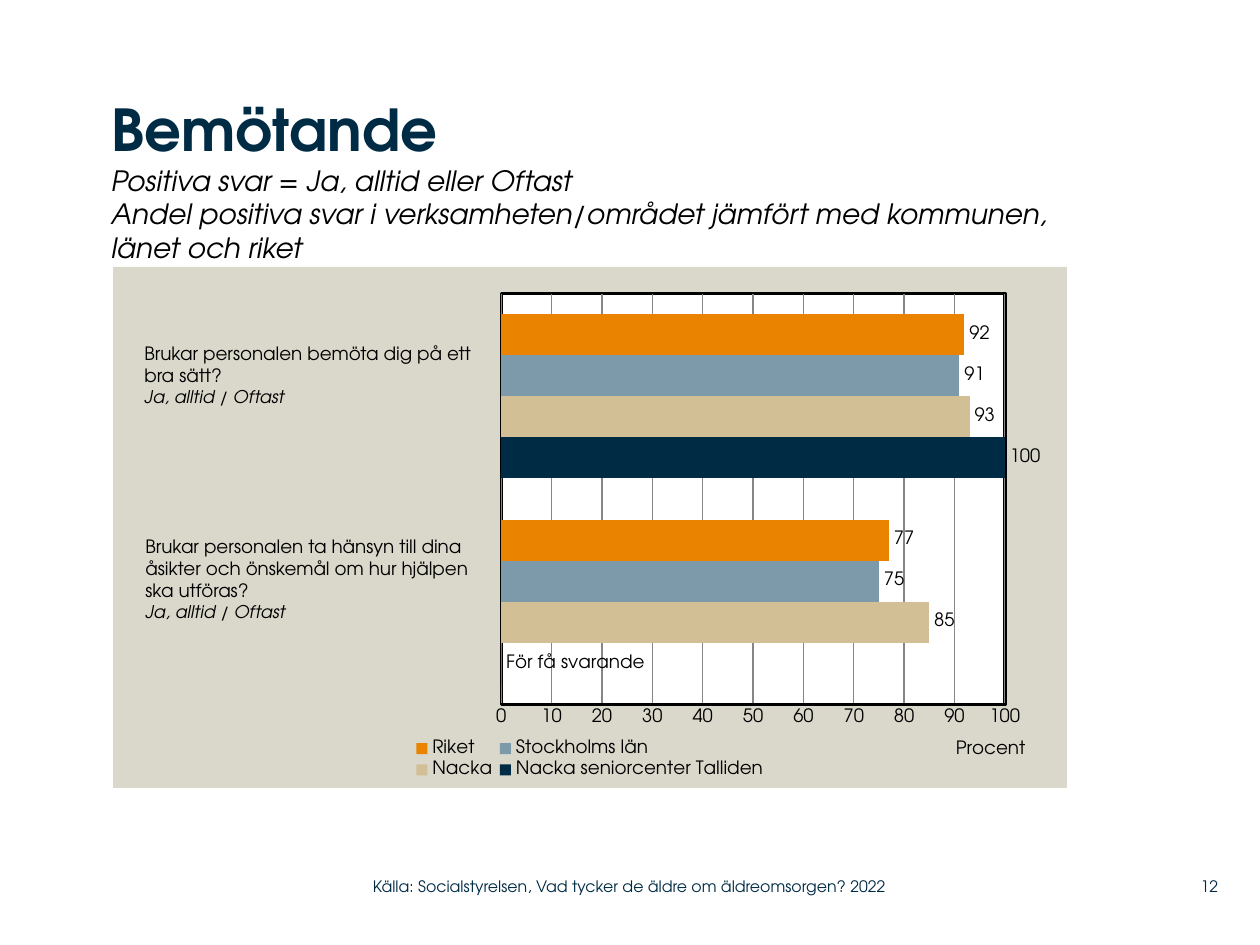
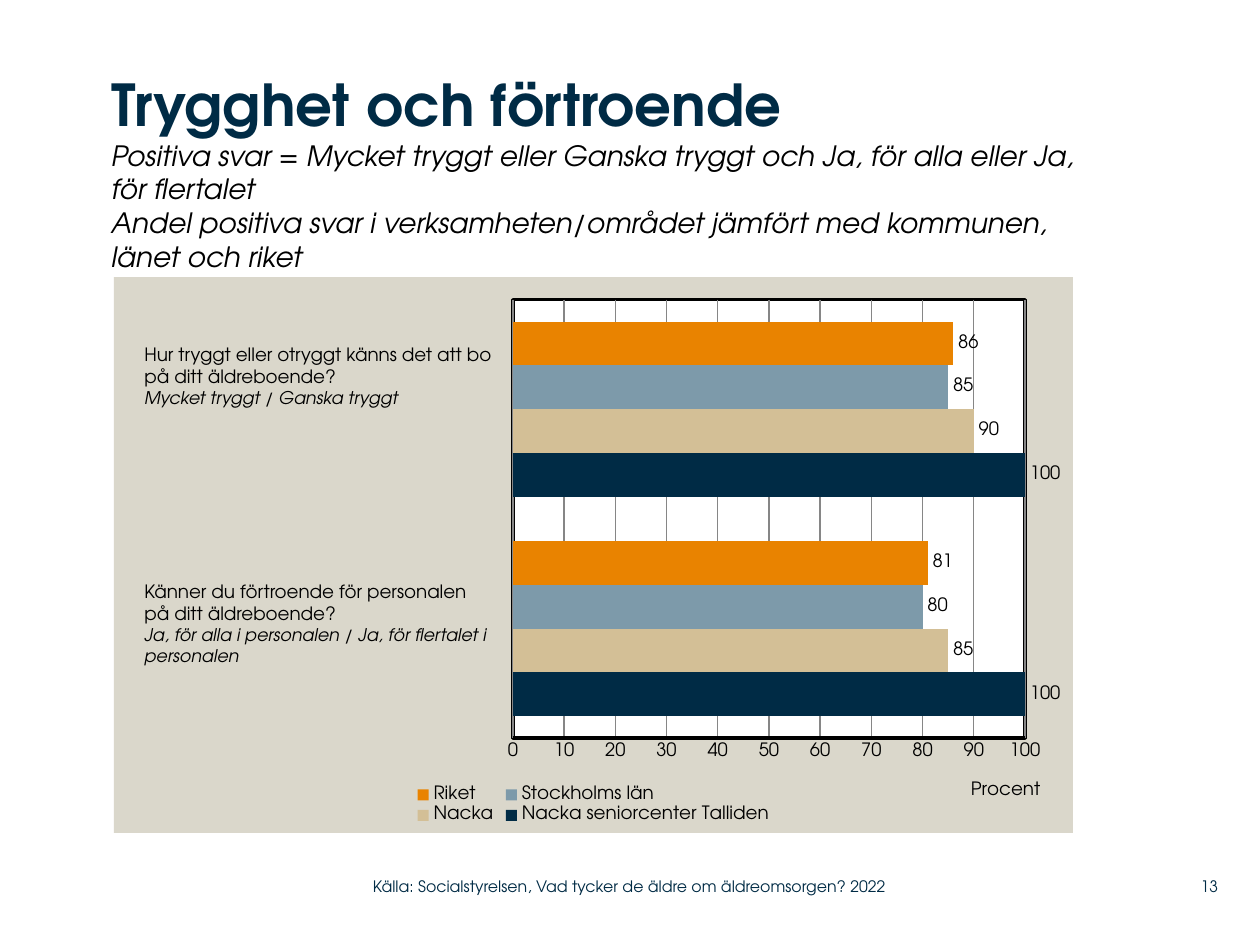
from pptx import Presentation
from pptx.chart.data import CategoryChartData
from pptx.dml.color import RGBColor
from pptx.enum.chart import XL_CHART_TYPE, XL_LABEL_POSITION, XL_LEGEND_POSITION, XL_TICK_MARK
from pptx.enum.text import MSO_ANCHOR, MSO_AUTO_SIZE, PP_ALIGN
from pptx.oxml import parse_xml
from pptx.oxml.ns import nsdecls, qn
from pptx.util import Emu, Pt

FACE = "TeX Gyre Adventor"
HUES = {"navy": "002B45", "sand": "D3BF96", "steel": "7D9AAA", "orange": "E98300",
        "panel": "DAD7CB", "white": "FFFFFF", "black": "000000", "grid": "868686"}
SERIES = [("Nacka seniorcenter Talliden", "navy"), ("Nacka", "sand"),
          ("Stockholms län", "steel"), ("Riket", "orange")]
FEW = "För få svarande"
SHARE = "Andel positiva svar i verksamheten/området jämfört med kommunen, länet och riket"
SOURCE = "Källa: Socialstyrelsen, Vad tycker de äldre om äldreomsorgen? 2022"

STYLES = {
    "head": {"size": Pt(33), "bold": True, "italic": False, "hue": "navy"},
    "sub": {"size": Pt(16), "bold": False, "italic": True, "hue": "black"},
    "ask": {"size": Pt(10.5), "bold": False, "italic": False, "hue": "black"},
    "reply": {"size": Pt(10), "bold": False, "italic": True, "hue": "black"},
    "foot": {"size": Pt(9), "bold": False, "italic": False, "hue": "navy"},
}

PAGES = [
    {
        "head": "Bemötande",
        "subs": ["Positiva svar = Ja, alltid eller Oftast", SHARE],
        "title": (111, 94, 1013, 151),
        "chart": (113, 267, 954, 521),
        "plot": (0.407, 0.051, 0.528, 0.789),
        "legend": (0.31, 0.9, 0.38, 0.09),
        "unit": (0.88, 0.9),
        "values": [(0, 100), (85, 93), (75, 91), (77, 92)],
        "asks": [
            ((132, 336, 374, 102),
             ["Brukar personalen bemöta dig på ett", "bra sätt?"], "Ja, alltid / Oftast"),
            ((133, 529, 379, 123),
             ["Brukar personalen ta hänsyn till dina", "åsikter och önskemål om hur hjälpen",
              "ska utföras?"], "Ja, alltid / Oftast"),
        ],
        "number": "12",
    },
    {
        "head": "Trygghet och förtroende",
        "subs": ["Positiva svar = Mycket tryggt eller Ganska tryggt och Ja, för alla eller Ja, "
                 "för flertalet", SHARE],
        "title": (111, 69, 977, 207),
        "chart": (114, 277, 959, 556),
        "plot": (0.416, 0.041, 0.534, 0.789),
        "legend": (0.31, 0.91, 0.38, 0.08),
        "unit": (0.89, 0.9),
        "values": [(100, 100), (85, 90), (80, 85), (81, 86)],
        "asks": [
            ((132, 337, 375, 102),
             ["Hur tryggt eller otryggt känns det att bo på ditt äldreboende?"],
             "Mycket tryggt / Ganska tryggt"),
            ((132, 574, 378, 123),
             ["Känner du förtroende för personalen", "på ditt äldreboende?"],
             "Ja, för alla i personalen / Ja, för flertalet i personalen"),
        ],
        "number": "13",
    },
]
FOOT = (373, 868, 558, 37)
NUMBER = (1159, 868, 59, 37)


def px(n):
    return Emu(round(n * 914400 / 126))


def rgb(hue):
    return RGBColor.from_string(HUES[hue])


def apply(item, **vals):
    for key, val in vals.items():
        setattr(item, key, val)


def style(font, kind):
    for key, val in STYLES[kind].items():
        if key == "hue":
            font.color.rgb = rgb(val)
        else:
            setattr(font, key, val)
    font.name = FACE


def write(par, text, kind):
    run = par.add_run()
    run.text = text
    style(run.font, kind)


def bare(frame):
    apply(frame, margin_left=0, margin_right=0, margin_top=0, margin_bottom=0)


def label(slide, box, lines):
    frame = slide.shapes.add_textbox(*map(px, box)).text_frame
    frame.word_wrap = True
    for i, (text, kind) in enumerate(lines):
        par = frame.add_paragraph() if i else frame.paragraphs[0]
        write(par, text, kind)
    return frame


def foot(slide, box, text, align):
    frame = label(slide, box, [(text, "foot")])
    bare(frame)
    frame.vertical_anchor = MSO_ANCHOR.MIDDLE
    frame.paragraphs[0].alignment = align


def title(slide, page):
    shape = slide.shapes.title
    apply(shape, **dict(zip(("left", "top", "width", "height"), map(px, page["title"]))))
    frame = shape.text_frame
    bare(frame)
    apply(frame, word_wrap=True, auto_size=MSO_AUTO_SIZE.NONE, vertical_anchor=MSO_ANCHOR.TOP)
    par = frame.paragraphs[0]
    apply(par, alignment=PP_ALIGN.LEFT, line_spacing=1.0)
    write(par, page["head"], "head")
    for sub in page["subs"]:
        par.add_line_break()
        write(par, sub, "sub")


def place(node, spot, box, inner=False):
    for old in node.findall(qn("c:layout")):
        node.remove(old)
    names = ("x", "y", "w", "h")[:len(box)]
    target = '<c:layoutTarget val="inner"/>' if inner else ""
    modes = "".join(f'<c:{n}Mode val="edge"/>' for n in names[:2])
    sizes = "".join(f'<c:{n} val="{v}"/>' for n, v in zip(names, box))
    node.insert(spot, parse_xml(f'<c:layout {nsdecls("c")}><c:manualLayout>{target}{modes}{sizes}'
                                '</c:manualLayout></c:layout>'))


def paint(hue, line):
    return parse_xml(f'<c:spPr {nsdecls("c", "a")}><a:solidFill><a:srgbClr val="{HUES[hue]}"/>'
                     f'</a:solidFill>{line}</c:spPr>')


def graph(slide, page):
    data = CategoryChartData()
    data.categories = ["1", "2"]
    for (name, _), vals in zip(SERIES, page["values"]):
        data.add_series(name, vals)
    chart = slide.shapes.add_chart(XL_CHART_TYPE.BAR_CLUSTERED, *map(px, page["chart"]),
                                   data).chart
    apply(chart, has_title=False, has_legend=True)
    style(chart.font, "ask")
    apply(chart.legend, position=XL_LEGEND_POSITION.BOTTOM, include_in_layout=False)
    style(chart.legend.font, "ask")
    chart.category_axis.visible = False
    chart.category_axis.has_major_gridlines = False

    axis = chart.value_axis
    apply(axis, minimum_scale=0, maximum_scale=100, major_unit=10, has_major_gridlines=True,
          major_tick_mark=XL_TICK_MARK.NONE, minor_tick_mark=XL_TICK_MARK.NONE, has_title=True)
    style(axis.tick_labels.font, "ask")
    for line, hue, width in ((axis.format.line, "black", 2),
                             (axis.major_gridlines.format.line, "grid", 0.75)):
        line.color.rgb = rgb(hue)
        line.width = Pt(width)
    write(axis.axis_title.text_frame.paragraphs[0], "Procent", "ask")

    plot = chart.plots[0]
    apply(plot, gap_width=100, overlap=0, vary_by_categories=False)
    for (_, hue), bars, vals in zip(SERIES, plot.series, page["values"]):
        bars.format.fill.solid()
        bars.format.fill.fore_color.rgb = rgb(hue)
        apply(bars.data_labels, show_value=True, position=XL_LABEL_POSITION.OUTSIDE_END)
        style(bars.data_labels.font, "ask")
        for i, val in enumerate(vals):
            if val == 0:
                tag = bars.points[i].data_label
                write(tag.text_frame.paragraphs[0], FEW, "ask")
                tag.position = XL_LABEL_POSITION.OUTSIDE_END

    body = chart.element.find(qn("c:chart"))
    area = body.find(qn("c:plotArea"))
    place(area, 0, page["plot"], True)
    place(body.find(qn("c:legend")), 1, page["legend"])
    place(area.find(qn("c:valAx")).find(qn("c:title")), 1, page["unit"])
    area.append(paint("white", f'<a:ln w="{Pt(2)}"><a:solidFill><a:srgbClr val="{HUES["black"]}"/>'
                               '</a:solidFill></a:ln>'))
    body.addnext(paint("panel", "<a:ln><a:noFill/></a:ln>"))


def main():
    deck = Presentation()
    apply(deck, slide_width=px(1260), slide_height=px(945))
    for page in PAGES:
        slide = deck.slides.add_slide(deck.slide_layouts[5])
        title(slide, page)
        graph(slide, page)
        for box, lines, reply in page["asks"]:
            frame = label(slide, box, [(text, "ask") for text in lines] + [(reply, "reply")])
            frame.auto_size = MSO_AUTO_SIZE.SHAPE_TO_FIT_TEXT
        foot(slide, FOOT, SOURCE, PP_ALIGN.LEFT)
        foot(slide, NUMBER, page["number"], PP_ALIGN.RIGHT)
    deck.save("out.pptx")


if __name__ == "__main__":
    main()
